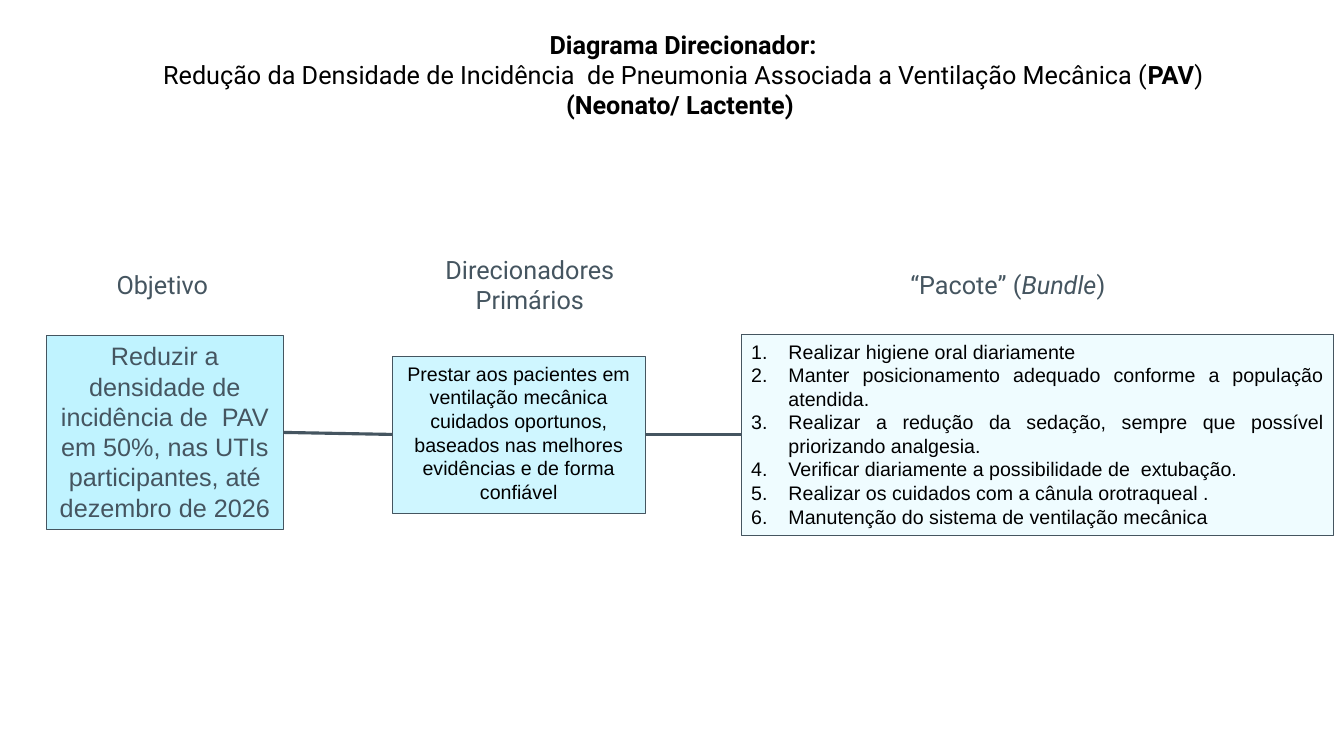
import pptx
import pptx.util
import pptx.dml.color
import pptx.enum.shapes
import pptx.enum.text
import pptx.oxml.ns
from lxml import etree

Inches = pptx.util.Inches
Align = pptx.enum.text.PP_ALIGN
HUES = {
    "slate": "455560", "black": "000000",
    "goal": "C0F3FF", "driver": "CFF6FF", "bundle": "EFFCFF",
}
HEAD = {"name": "Roboto", "size": pptx.util.Pt(18)}
LARGE = {"name": "Arial", "size": pptx.util.Pt(18)}
SMALL = {"name": "Arial", "size": pptx.util.Pt(14)}

ITEMS = [
    "Realizar higiene oral diariamente",
    "Manter posicionamento adequado conforme a população atendida.",
    "Realizar a redução da sedação, sempre que possível priorizando analgesia.",
    "Verificar diariamente a possibilidade de  extubação.",
    "Realizar os cuidados com a cânula orotraqueal .",
    "Manutenção do sistema de ventilação mecânica",
]


def color(hue):
    return pptx.dml.color.RGBColor.from_string(HUES[hue])


def assign(item, values):
    for name, value in values.items():
        setattr(item, name, value)


def place(shape, box):
    names = ("left", "top", "width", "height")
    assign(shape, dict(zip(names, map(Inches, box))))


def write(shape, lines, style, hue, align=Align.CENTER):
    """Each line is a list of (text, font values) runs."""
    frame = shape.text_frame
    assign(frame, {
        "word_wrap": True,
        "auto_size": pptx.enum.text.MSO_AUTO_SIZE.NONE,
        "vertical_anchor": pptx.enum.text.MSO_ANCHOR.TOP,
        "margin_left": Inches(0.1), "margin_right": Inches(0.1),
        "margin_top": Inches(0.05), "margin_bottom": Inches(0.05),
    })
    for i, line in enumerate(lines):
        para = frame.add_paragraph() if i else frame.paragraphs[0]
        assign(para, {"alignment": align, "line_spacing": 1.0,
                      "space_before": 0, "space_after": 0})
        for text, extra in line:
            run = para.add_run()
            run.text = text
            assign(run.font, {**style, **extra})
            run.font.color.rgb = color(hue)


def paint(shape, fill):
    shape.fill.solid()
    shape.fill.fore_color.rgb = color(fill)
    shape.line.color.rgb = color("slate")
    shape.line.width = pptx.util.Pt(0.75)


def add_box(slide, box, fill, text, style, hue):
    kind = pptx.enum.shapes.MSO_SHAPE.RECTANGLE
    shape = slide.shapes.add_shape(kind, *map(Inches, box))
    shape.shadow.inherit = False
    paint(shape, fill)
    write(shape, [[(text, {})]], style, hue)


def add_label(slide, box, runs):
    label = slide.shapes.add_textbox(*map(Inches, box))
    write(label, [runs], HEAD, "slate")


def add_link(slide, *ends):
    kind = pptx.enum.shapes.MSO_CONNECTOR.STRAIGHT
    link = slide.shapes.add_connector(kind, *map(Inches, ends))
    link.line.color.rgb = color("slate")
    link.line.width = pptx.util.Pt(2.25)
    etree.SubElement(link._element.spPr, pptx.oxml.ns.qn("a:effectLst"))


def add_list(body, box, items):
    place(body, box)
    paint(body, "bundle")
    write(body, [[(item, {})] for item in items], SMALL, "black", Align.JUSTIFY)
    for para in body.text_frame.paragraphs:
        props = para._p.get_or_add_pPr()
        props.set("marL", str(Inches(0.37)))
        props.set("indent", str(Inches(-0.37)))
        mark = etree.SubElement(props, pptx.oxml.ns.qn("a:buAutoNum"))
        mark.set("type", "arabicPeriod")


def main():
    deck = pptx.Presentation()
    deck.slide_width, deck.slide_height = Inches(13.33), Inches(7.5)
    slide = deck.slides.add_slide(deck.slide_layouts[1])
    title, body = slide.placeholders

    # Title
    bold, plain = {"bold": True}, {"bold": False}
    place(title, (0.32, 0.24, 12.91, 1.01))
    write(title, [
        [("Diagrama Direcionador:", bold)],
        [("Redução da Densidade de Incidência  de Pneumonia Associada a "
          "Ventilação Mecânica (", plain), ("PAV", bold), (")", plain)],
        [("(Neonato/ Lactente) ", bold)],
    ], HEAD, "black")

    # Column headings
    add_label(slide, (0.67, 2.62, 1.88, 0.4), [("Objetivo", {})])
    add_label(slide, (4, 2.47, 2.51, 0.71), [("Direcionadores Primários", {})])
    add_label(slide, (7.97, 2.62, 4.05, 0.4),
              [("“Pacote” (", {}), ("Bundle", {"italic": True}), (")", {})])

    # Goal, driver and bundle
    add_box(slide, (0.46, 3.33, 2.35, 1.92), "goal",
            "Reduzir a densidade de incidência de  PAV em 50%, nas UTIs "
            "participantes, até dezembro de 2026", LARGE, "slate")
    add_box(slide, (3.89, 3.54, 2.51, 1.55), "driver",
            "Prestar aos pacientes em ventilação mecânica cuidados oportunos, "
            "baseados nas melhores evidências e de forma confiável",
            SMALL, "black")
    add_list(body, (7.35, 3.32, 5.88, 1.99), ITEMS)

    # Links between the columns
    add_link(slide, 3.89, 4.31, 2.81, 4.29)
    add_link(slide, 6.4, 4.31, 7.35, 4.31)

    deck.save("out.pptx")


if __name__ == "__main__":
    main()
